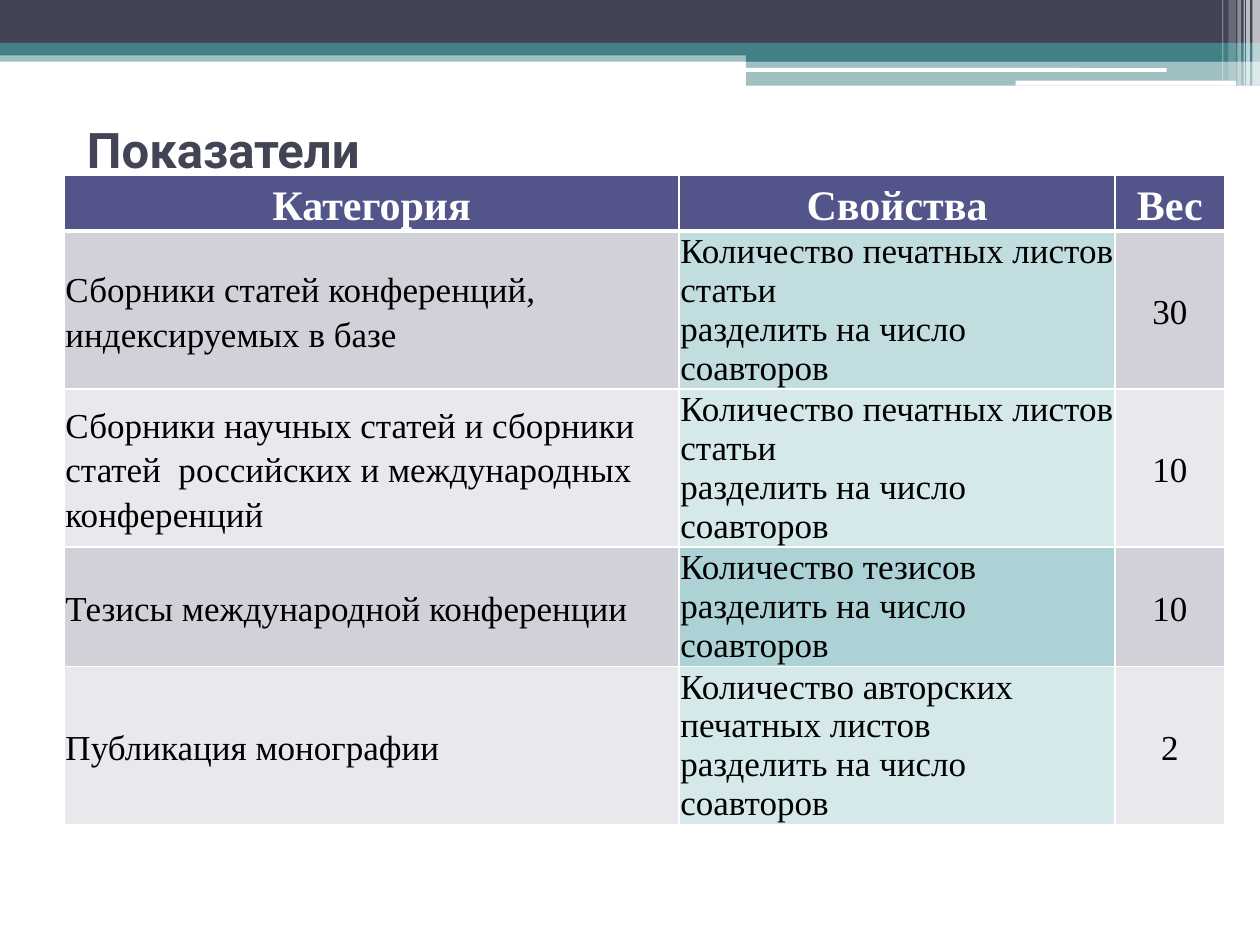
from lxml.etree import SubElement
from pptx import Presentation
from pptx.dml.color import RGBColor as Rgb
from pptx.enum.shapes import MSO_SHAPE as Kind
from pptx.enum.text import MSO_ANCHOR as Anchor, PP_ALIGN as Align
from pptx.oxml import parse_xml
from pptx.oxml.ns import nsdecls, qn
from pptx.util import Inches, Pt

HUES = {
    "ink": "424456", "teal": "438086", "white": "FFFFFF", "black": "000000",
    "head": "53548A", "gray": "D1D1DA", "pale": "E9E9ED",
    "aqua": "ADD2D6", "mist": "D6E9EA",
}
SERIF = "Times New Roman"


def write(frame, text, font=SERIF, size=20, hue="black", bold=False, align=Align.LEFT, space=1.0):
    frame.text = text
    for para in frame.paragraphs:
        para.alignment = align
        para.line_spacing = space
        for run in para.runs:
            run.font.name = font
            run.font.size = Pt(size)
            run.font.bold = bold
            run.font.color.rgb = Rgb.from_string(HUES[hue])


def paint(fill, hue, alpha=100):
    fill.solid()
    fill.fore_color.rgb = Rgb.from_string(HUES[hue])
    if alpha < 100:
        color = fill._xPr.find(qn("a:solidFill"))[0]
        SubElement(color, qn("a:alpha"), val=str(alpha * 1000))


deck = Presentation()
deck.slide_width, deck.slide_height = Inches(10), Inches(7.5)
slide = deck.slides.add_slide(deck.slide_layouts[5])
title = slide.shapes.title

BANDS = [
    (0, 0.4, 10, 0.09, "teal", 50),
    (0, 0, 10, 0.34, "ink", 100),
    (0, 0.34, 10, 0.1, "teal", 100),
    (5.92, 0.39, 4.08, 0.1, "teal", 100),
    (5.92, 0.48, 4.08, 0.2, "teal", 50),
    (5.91, 0.54, 3.35, 0.03, "white", 100),
    (8.06, 0.64, 1.75, 0.04, "white", 100),
]
STRIPES = [
    (9.94, 0.06, 0.68, 65), (9.89, 0.03, 0.68, 65), (9.87, 0.01, 0.68, 60),
    (9.82, 0.03, 0.68, 40), (9.75, 0.06, 0.64, 20), (9.7, 0.01, 0.64, 30),
]
BANDS += [(left, 0, wide, high, "white", alpha) for left, wide, high, alpha in STRIPES]
for *box, hue, alpha in BANDS:
    kind = Kind.ROUNDED_RECTANGLE if (hue, alpha) == ("white", 100) else Kind.RECTANGLE
    band = slide.shapes.add_shape(kind, *map(Inches, box))
    band.shadow.inherit = False
    band.line.fill.background()
    paint(band.fill, hue, alpha)

title.left, title.top, title.width, title.height = map(Inches, (0.59, 0.6, 9, 1.17))
title.text_frame.vertical_anchor = Anchor.MIDDLE
write(title.text_frame, "Показатели", font="Roboto", size=28, hue="ink", bold=True)

SHARE = "\nразделить на число соавторов"
SHEETS = "Количество печатных листов статьи" + SHARE
ROWS = [
    ("Категория", "Свойства", "Вес"),
    ("Сборники статей конференций, индексируемых в базе", SHEETS, "30"),
    ("Сборники научных статей и сборники статей  российских и международных конференций", SHEETS, "10"),
    ("Тезисы международной конференции", "Количество тезисов" + SHARE, "10"),
    ("Публикация монографии", "Количество авторских печатных листов" + SHARE, "2"),
]
WIDTHS = [4.88, 3.46, 0.87]
HEIGHTS = [0.43, 1.25, 1.25, 0.95, 1.25]
table = slide.shapes.add_table(
    len(ROWS), len(WIDTHS), Inches(0.51), Inches(1.39), Inches(sum(WIDTHS)), Inches(sum(HEIGHTS))
).table
for col, wide in zip(table.columns, WIDTHS):
    col.width = Inches(wide)
for row, high in zip(table.rows, HEIGHTS):
    row.height = Inches(high)

for r, row in enumerate(ROWS):
    for c, text in enumerate(row):
        cell = table.cell(r, c)
        cell.vertical_anchor = Anchor.MIDDLE
        cell.margin_left = cell.margin_right = Inches(0.01)
        cell.margin_top = cell.margin_bottom = Inches(0.01)
        if r == 0:
            look = dict(size=24, hue="white", bold=True)
            hue = "head"
        else:
            look = {}
            hue = (("pale", "gray"), ("mist", "aqua"))[c == 1][r % 2]
        align = Align.CENTER if r == 0 or c == 2 else Align.LEFT
        space = 1.0 if r and c == 1 else 1.15
        write(cell.text_frame, text, align=align, space=space, **look)
        paint(cell.fill, hue, 74 if (r, c) == (1, 1) else 100)
        props = cell._tc.get_or_add_tcPr()
        for spot, side in enumerate("LRTB"):
            thick = 3 if (r, side) in ((0, "B"), (1, "T")) else 1
            props.insert(spot, parse_xml(
                f'<a:ln{side} {nsdecls("a")} w="{Pt(thick)}"><a:solidFill>'
                f'<a:srgbClr val="{HUES["white"]}"/></a:solidFill></a:ln{side}>'
            ))

deck.save("out.pptx")
